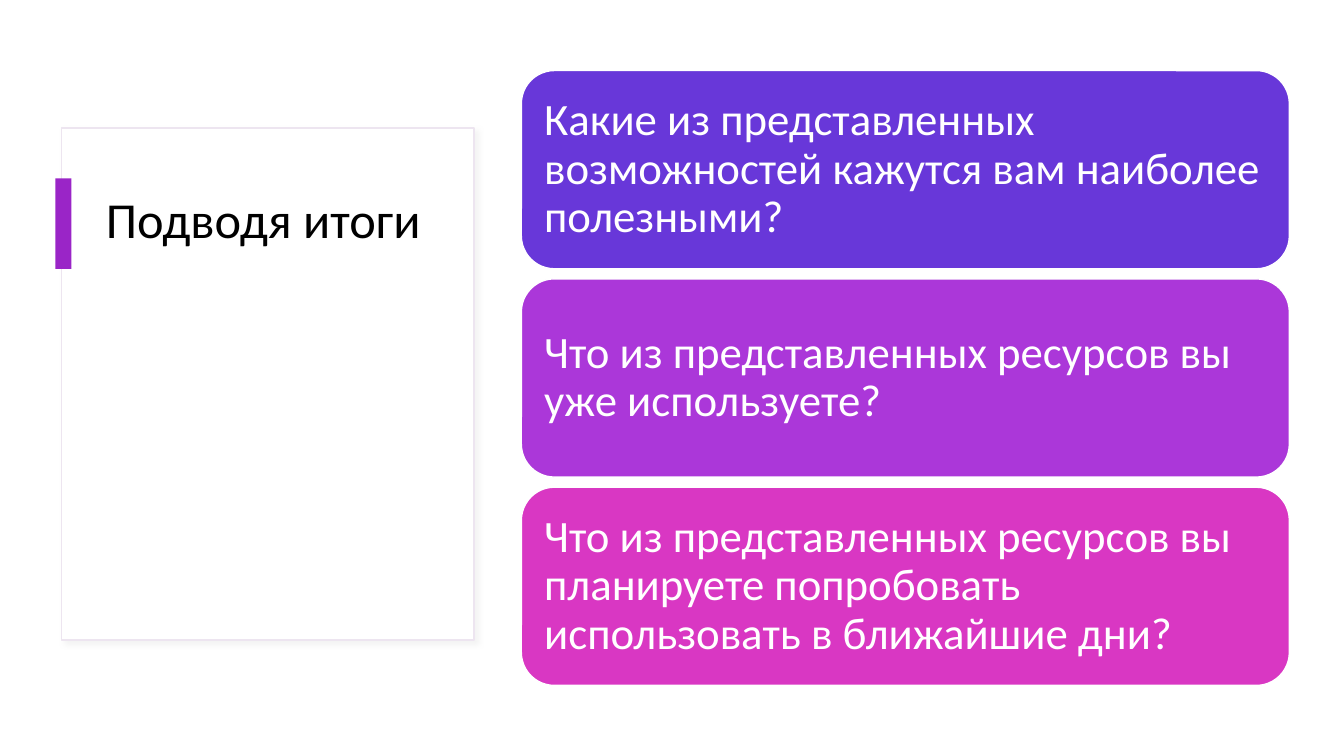
from lxml.etree import SubElement
from pptx import Presentation
from pptx.dml.color import RGBColor
from pptx.enum.shapes import MSO_SHAPE as Shape
from pptx.enum.text import MSO_ANCHOR as Anchor, MSO_AUTO_SIZE as AutoSize, PP_ALIGN as Align
from pptx.oxml.ns import qn
from pptx.util import Pt

TITLE = "Подводя итоги"
QUESTIONS = [
    ("Какие из представленных возможностей кажутся вам наиболее полезными?", "6837D9"),
    ("Что из представленных ресурсов вы уже используете?", "AB37D9"),
    ("Что из представленных ресурсов вы планируете попробовать "
     "использовать в ближайшие дни?", "D937C3"),
]
FONT = "Calibri"
PANEL = (44, 91.4, 294.5, 365.8)
ACCENT = (39.6, 127.4, 11.5, 64.8)
TITLE_BOX = (68.4, 135.4, 244, 277)
CARD_LEFT, CARD_TOP, CARD_WIDTH, CARD_HEIGHT = 372.4, 50.4, 548.6, 141.6
CARD_GAP = 7.2
CARD_INSET = 9.4


def color(value):
    return RGBColor.from_string(value)


def add_block(slide, kind, box, fill, line=None):
    shape = slide.shapes.add_shape(kind, *map(Pt, box))
    shape.shadow.inherit = False
    shape.fill.solid()
    shape.fill.fore_color.rgb = color(fill)
    if line:
        shape.line.color.rgb = color(line)
        shape.line.width = Pt(1)
    else:
        shape.line.fill.background()
    return shape


def add_soft_shadow(shape):
    effects = shape.element.spPr.find(qn("a:effectLst"))
    shadow = SubElement(effects, qn("a:outerShdw"), blurRad=str(Pt(4)),
                        dist=str(Pt(3)), dir="2700000", algn="tl", rotWithShape="0")
    tint = SubElement(shadow, qn("a:srgbClr"), val="D9D9D9")
    SubElement(tint, qn("a:alpha"), val="30000")


def write(shape, text, size, ink, anchor):
    frame = shape.text_frame
    frame.text = text
    frame.word_wrap = True
    frame.auto_size = AutoSize.NONE
    frame.vertical_anchor = anchor
    paragraph = frame.paragraphs[0]
    paragraph.alignment = Align.LEFT
    paragraph.line_spacing = 0.9
    font = paragraph.runs[0].font
    font.name = FONT
    font.size = Pt(size)
    font.color.rgb = color(ink)
    return frame


def main():
    presentation = Presentation()
    presentation.slide_width, presentation.slide_height = Pt(960), Pt(540)
    slide = presentation.slides.add_slide(presentation.slide_layouts[5])

    panel = add_block(slide, Shape.RECTANGLE, PANEL, "FFFFFF", "EDE5F0")
    add_soft_shadow(panel)

    title = slide.shapes.title
    title.left, title.top, title.width, title.height = map(Pt, TITLE_BOX)
    write(title, TITLE, 36, "000000", Anchor.TOP)
    title.element.addprevious(panel.element)

    add_block(slide, Shape.RECTANGLE, ACCENT, "9A25C7")

    for index, (question, fill) in enumerate(QUESTIONS):
        top = CARD_TOP + index * (CARD_HEIGHT + CARD_GAP)
        box = (CARD_LEFT, top, CARD_WIDTH, CARD_HEIGHT)
        card = add_block(slide, Shape.ROUNDED_RECTANGLE, box, fill, "FFFFFF")
        frame = write(card, question, 32, "FFFFFF", Anchor.MIDDLE)
        frame.margin_left = frame.margin_right = Pt(CARD_INSET)
        frame.margin_top = frame.margin_bottom = Pt(CARD_INSET)

    presentation.save("out.pptx")


if __name__ == "__main__":
    main()
